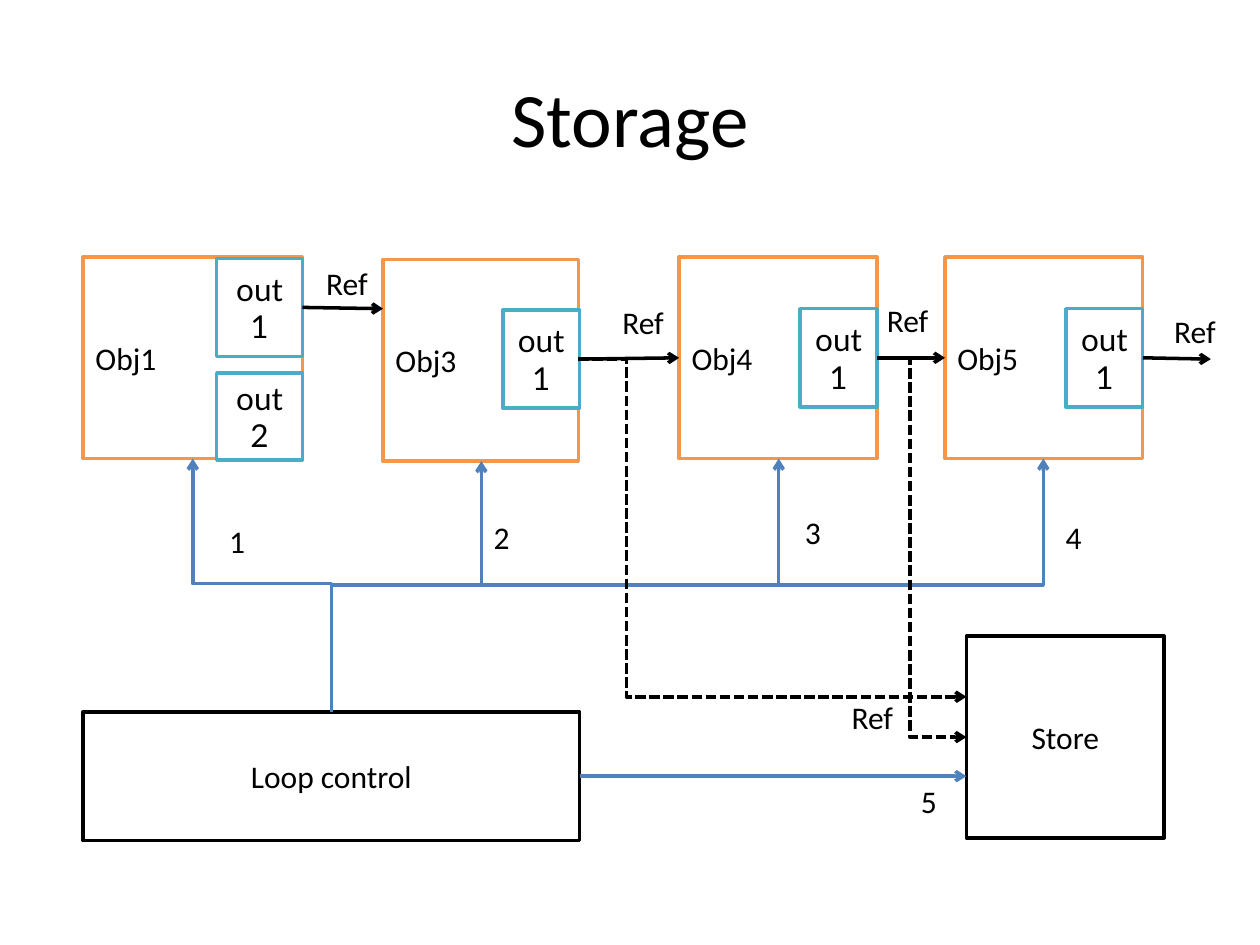
from dataclasses import dataclass
from typing import Optional

from lxml.etree import SubElement
from pptx import Presentation
from pptx.dml.color import RGBColor
from pptx.enum.dml import MSO_LINE
from pptx.enum.shapes import MSO_CONNECTOR as CXN, MSO_SHAPE
from pptx.enum.text import MSO_ANCHOR as ANCHOR, MSO_AUTO_SIZE as FIT, PP_ALIGN as ALIGN
from pptx.oxml.ns import qn
from pptx.util import Inches, Pt

BLACK, WHITE, ORANGE, TEAL, BLUE = "000000", "FFFFFF", "F79646", "4BACC6", "4F81BD"
TOP, LEFT, BOTTOM, RIGHT = range(4)


@dataclass
class Box:
    text: str
    x: float
    y: float
    w: float
    h: float
    line: str = BLACK
    align: ALIGN = ALIGN.CENTER
    font: str = "Calibri"


@dataclass
class Label:
    text: str
    x: float
    y: float
    w: float = 0.55


@dataclass
class Arrow:
    x1: float
    y1: float
    x2: float
    y2: float
    color: str = BLACK
    begin: Optional[str] = None
    end: Optional[str] = None


@dataclass
class Elbow:
    x1: float
    y1: float
    x2: float
    y2: float
    adj: float = 0.5


def output(text: str, x: float, y: float, w: float, h: float = 0.78) -> Box:
    return Box(text, x, y, w, h, TEAL, font="Lato")


def obj(text: str, x: float, y: float, w: float) -> Box:
    return Box(text, x, y, w, 1.6, ORANGE, ALIGN.LEFT)


GROUPS = [
    [obj("Obj1", 0.66, 2.04, 1.74), output("out1", 1.72, 2.05, 0.68),
     output("out2", 1.72, 2.96, 0.68, 0.69)],
    [obj("Obj3", 3.04, 2.06, 1.55), output("out1", 3.99, 2.46, 0.61)],
    [obj("Obj4", 5.39, 2.04, 1.57), output("out1", 6.35, 2.45, 0.61)],
    [obj("Obj5", 7.5, 2.04, 1.57), output("out1", 8.46, 2.45, 0.61)],
]
BOXES = [
    Box("Loop control", 0.66, 5.65, 3.94, 1.02),
    Box("Store", 7.67, 5.05, 1.57, 1.6),
]
ARROWS = [
    Arrow(2.4, 2.44, 3.04, 2.45, begin="Obj1.out1"),
    Arrow(4.6, 2.85, 5.39, 2.84, begin="Obj3.out1", end="Obj4"),
    Arrow(6.97, 2.84, 7.5, 2.84, begin="Obj4.out1", end="Obj5"),
    Arrow(9.07, 2.84, 9.61, 2.85, begin="Obj5.out1"),
    Arrow(4.6, 6.16, 7.67, 6.16, BLUE, begin="Loop control"),
]
CALLS = [
    Elbow(2.63, 5.65, 1.53, 3.64, 0.506),
    Elbow(2.63, 5.65, 3.82, 3.66, 0.506),
    Elbow(2.63, 5.65, 6.18, 3.64),
    Elbow(2.63, 5.65, 8.28, 3.64),
]
STORES = [
    Elbow(6.97, 2.84, 7.67, 5.85, 0.362),
    Elbow(4.59, 2.85, 7.67, 5.53, 0.124),
]
LABELS = [
    Label("Ref", 2.49, 2.05), Label("Ref", 4.84, 2.36), Label("Ref", 6.94, 2.34),
    Label("Ref", 9.22, 2.43), Label("Ref", 6.66, 5.49),
    Label("1", 1.72, 4.09, 0.33), Label("2", 3.82, 4.06, 0.33),
    Label("3", 6.29, 4.02, 0.33), Label("4", 8.36, 4.06, 0.33),
    Label("5", 7.21, 6.16, 0.33),
]


def rgb(value: str) -> RGBColor:
    return RGBColor.from_string(value)


def apply(target, values: dict) -> None:
    for name, value in values.items():
        setattr(target, name, value)


def write(sp, text: str, frame: dict, align=ALIGN.LEFT, font="Calibri", size=18) -> None:
    tf = sp.text_frame
    apply(tf, frame)
    p = tf.paragraphs[0]
    p.alignment = align
    r = p.add_run()
    r.text = text
    apply(r.font, {"name": font, "size": Pt(size)})
    r.font.color.rgb = rgb(BLACK)


def draw_box(shapes, box: Box):
    sp = shapes.add_shape(MSO_SHAPE.RECTANGLE, *map(Inches, (box.x, box.y, box.w, box.h)))
    sp.shadow.inherit = False
    sp.fill.solid()
    sp.fill.fore_color.rgb = rgb(WHITE)
    sp.line.color.rgb = rgb(box.line)
    sp.line.width = Pt(2)
    write(sp, box.text, {"word_wrap": True, "vertical_anchor": ANCHOR.MIDDLE},
          box.align, box.font)
    return sp


def draw_label(shapes, label: Label) -> None:
    sp = shapes.add_textbox(*map(Inches, (label.x, label.y, label.w, 0.4)))
    write(sp, label.text, {"word_wrap": False, "auto_size": FIT.SHAPE_TO_FIT_TEXT})


def draw_line(shapes, kind, ends, color: str, dash=None):
    c = shapes.add_connector(kind, *map(Inches, ends))
    c.line.color.rgb = rgb(color)
    apply(c.line, {"width": Pt(2), "dash_style": dash})
    spPr = c._element.spPr
    SubElement(spPr.find(qn("a:ln")), qn("a:tailEnd"), type="arrow")
    SubElement(spPr, qn("a:effectLst"))
    return c


def draw_arrow(shapes, arrow: Arrow, nodes: dict) -> None:
    c = draw_line(shapes, CXN.STRAIGHT, (arrow.x1, arrow.y1, arrow.x2, arrow.y2), arrow.color)
    if arrow.begin:
        c.begin_connect(nodes[arrow.begin], RIGHT)
    if arrow.end:
        c.end_connect(nodes[arrow.end], LEFT)


def draw_elbow(shapes, e: Elbow, color: str, dash=None, upward: bool = False) -> None:
    ends = (e.x1, e.y1, e.x2, e.y2)
    if upward:
        cx, cy = (e.x1 + e.x2) / 2, (e.y1 + e.y2) / 2
        half_w, half_h = abs(e.y2 - e.y1) / 2, abs(e.x2 - e.x1) / 2
        side = 1 if e.x2 > e.x1 else -1
        ends = (cx + side * half_w, cy + half_h, cx - side * half_w, cy - half_h)
    c = draw_line(shapes, CXN.ELBOW, ends, color, dash)
    spPr = c._element.spPr
    if upward:
        spPr.find(qn("a:xfrm")).set("rot", str((90 if side > 0 else 270) * 60000))
    guides = spPr.find(qn("a:prstGeom")).find(qn("a:avLst"))
    SubElement(guides, qn("a:gd"), name="adj1", fmla=f"val {round(e.adj * 100000)}")


def main() -> None:
    prs = Presentation()
    apply(prs, {"slide_width": Inches(10), "slide_height": Inches(7.5)})
    s = prs.slides.add_slide(prs.slide_layouts[6])
    shapes = s.shapes
    title = shapes.add_textbox(*map(Inches, (0.5, 0.3, 9, 1.25)))
    write(title, "Storage", {"word_wrap": True, "vertical_anchor": ANCHOR.MIDDLE},
          ALIGN.CENTER, size=44)
    nodes = {}
    for owner, *outputs in GROUPS:
        group = shapes.add_group_shape()
        nodes[owner.text] = draw_box(group.shapes, owner)
        for out in outputs:
            nodes[f"{owner.text}.{out.text}"] = draw_box(group.shapes, out)
    for box in BOXES:
        nodes[box.text] = draw_box(shapes, box)
    for arrow in ARROWS:
        draw_arrow(shapes, arrow, nodes)
    for call in CALLS:
        draw_elbow(shapes, call, BLUE, upward=True)
    for store in STORES:
        draw_elbow(shapes, store, BLACK, MSO_LINE.SQUARE_DOT)
    for label in LABELS:
        draw_label(shapes, label)
    prs.save("out.pptx")


if __name__ == "__main__":
    main()
